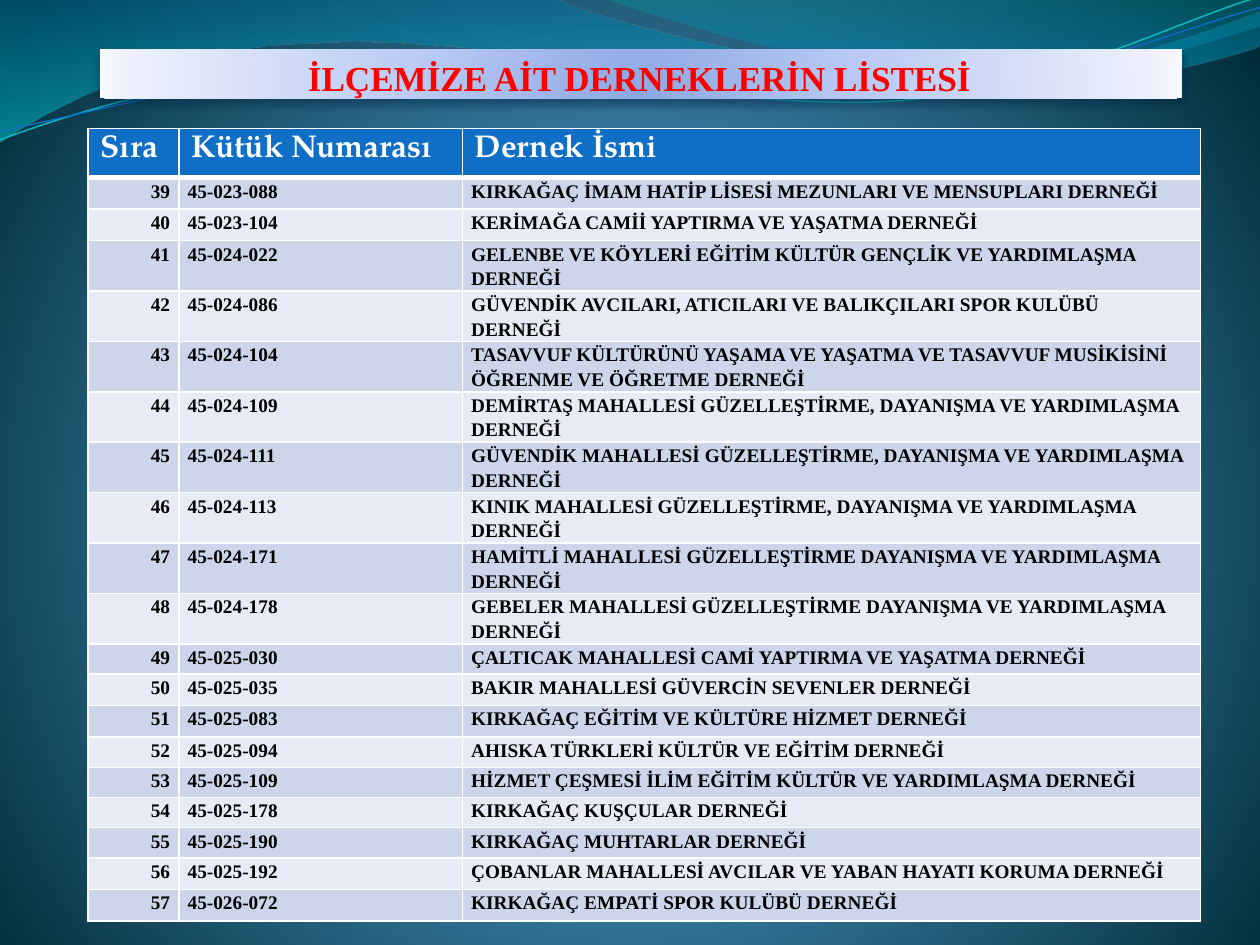
from lxml import etree
from pptx import Presentation
from pptx.dml.color import RGBColor
from pptx.enum.text import MSO_ANCHOR, MSO_AUTO_SIZE, PP_ALIGN
from pptx.oxml.ns import qn
from pptx.util import Inches, Pt

LEFT, CENTER, RIGHT = PP_ALIGN.LEFT, PP_ALIGN.CENTER, PP_ALIGN.RIGHT
BOTTOM, TOP = MSO_ANCHOR.BOTTOM, MSO_ANCHOR.TOP
NO_AUTOFIT = MSO_AUTO_SIZE.NONE
DRAWING = "http://schemas.openxmlformats.org/drawingml/2006/main"
COLORS = {
    "white": "FFFFFF", "black": "000000", "red": "FF0000", "header": "0F6FC6",
    "band_dark": "CCD5EA", "band_light": "E7EBF5", "shadow": "042747",
    "teal_line": "0AB8BF", "blue_line": "0F6FC6",
}


def set_gradient(properties, stops, direction):
    stop_xml = "".join(
        f'<a:gs pos="{place * 1000}"><a:srgbClr val="{color}">'
        f'<a:alpha val="{alpha * 1000}"/></a:srgbClr></a:gs>'
        for place, color, alpha in stops)
    gradient = etree.fromstring(
        f'<a:gradFill xmlns:a="{DRAWING}" rotWithShape="1">'
        f'<a:gsLst>{stop_xml}</a:gsLst>{direction}</a:gradFill>')
    properties.replace(properties.find(qn("a:noFill")), gradient)


def draw_curve(page, start, segments, closed):
    builder = page.shapes.build_freeform(Inches(start[0]), Inches(start[1]))
    builder.add_line_segments(
        [(Inches(segment[-1][0]), Inches(segment[-1][1])) for segment in segments],
        close=closed)
    shape = builder.convert_to_shape()
    lines = list(shape.element.iter(qn("a:lnTo")))
    for line, segment in zip(lines, segments):
        if len(segment) == 3:
            points = "".join(
                f'<a:pt x="{Inches(x) - shape.left}" y="{Inches(y) - shape.top}"/>'
                for x, y in segment)
            line.getparent().replace(line, etree.fromstring(
                f'<a:cubicBezTo xmlns:a="{DRAWING}">{points}</a:cubicBezTo>'))
    shape.shadow.inherit = False
    shape.fill.background()
    shape.line.fill.background()
    return shape


deck = Presentation()
deck.slide_width, deck.slide_height = Inches(10), Inches(7.5)
page = deck.slides.add_slide(deck.slide_layouts[5])

page.background.fill.background()
set_gradient(
    page.element.find(".//" + qn("p:bgPr")),
    [(0, "4AA0D6", 100), (25, "4C98C7", 100), (100, "002C38", 100)],
    '<a:path path="circle"><a:fillToRect l="10000" t="110000" r="10000" b="100000"/></a:path>')

waves = [
    ((0, 0), [
        [(4.4, -0.01)],
        [(4.76, 0.17), (6.64, 0.63), (7.58, 0.63)],
        [(8.53, 0.63), (9.58, 0.26), (10, 0.09)],
        [(10.01, 0.36)],
        [(9.83, 0.44), (8.7, 0.76), (7.46, 0.75)],
        [(6.22, 0.75), (3.82, 0.28), (2.57, 0.34)],
        [(1.29, 0.36), (0.46, 0.83), (-0.01, 1.13)],
        [(0, 0)],
    ], [(0, "0074A1", 45), (100, "00C6CF", 55)]),
    ((4.79, -0.01), [
        [(5.09, 0.11), (6.82, 0.62), (7.69, 0.65)],
        [(8.56, 0.69), (9.61, 0.32), (10, 0.21)],
        [(10, 0)],
        [(4.79, -0.01)],
    ], [(0, "00A1A9", 30), (80, "008BBF", 45)]),
]
for start, segments, stops in waves:
    wave = draw_curve(page, start, segments, True)
    set_gradient(wave.element.spPr, stops, '<a:lin ang="5400000" scaled="1"/>')

strands = [
    ((0, 1.11), [
        [(0.48, 0.93), (1.58, 0.57), (2.77, 0.52)],
        [(3.95, 0.47), (5.93, 0.89), (7.13, 0.8)],
        [(8.33, 0.71), (9.38, 0.15), (9.98, -0.02)],
    ], "teal_line", 0.85),
    ((0, 1.04), [
        [(0.47, 0.96), (1.64, 0.61), (2.83, 0.56)],
        [(4.03, 0.51), (5.97, 0.84), (7.17, 0.75)],
        [(8.36, 0.67), (9.41, 0.21), (10, 0.06)],
    ], "blue_line", 0.75),
]
for start, segments, color, width in strands:
    strand = draw_curve(page, start, segments, False)
    strand.line.color.rgb = RGBColor.from_string(COLORS[color])
    strand.line.width = Pt(width)

title = page.shapes.title
title.element.getparent().append(title.element)
title.left, title.top = Inches(0.79), Inches(0.39)
title.width, title.height = Inches(8.59), Inches(0.39)
title.fill.background()
set_gradient(
    title.element.spPr,
    [(0, "8DA8E3", 100), (43, "BBCBF3", 100), (93, "EAEFFB", 100), (100, "F7F9FF", 100)],
    '<a:path path="circle"><a:fillToRect l="50000" t="130000" r="50000" b="-30000"/></a:path>')
title.element.spPr.append(etree.fromstring(
    f'<a:effectLst xmlns:a="{DRAWING}"><a:outerShdw blurRad="{Pt(4.5)}" dist="{Pt(3)}" '
    f'dir="5400000" rotWithShape="0"><a:srgbClr val="{COLORS["shadow"]}">'
    '<a:alpha val="48000"/></a:srgbClr></a:outerShdw></a:effectLst>'))
frame = title.text_frame
frame.text = "İLÇEMİZE AİT DERNEKLERİN LİSTESİ"
frame_format = {
    "auto_size": NO_AUTOFIT, "word_wrap": True, "vertical_anchor": BOTTOM,
    "margin_left": 0, "margin_top": 0, "margin_right": Inches(0.02), "margin_bottom": 0,
}
for name, value in frame_format.items():
    setattr(frame, name, value)
para = frame.paragraphs[0]
para.alignment = CENTER
for name, value in {"size": Pt(20), "name": "Times New Roman", "bold": True}.items():
    setattr(para.runs[0].font, name, value)
para.runs[0].font.color.rgb = RGBColor.from_string(COLORS["red"])

headings = ("Sıra", "Kütük Numarası", "Dernek İsmi")
first_number = 39
associations = [
    ("45-023-088", "KIRKAĞAÇ İMAM HATİP LİSESİ MEZUNLARI VE MENSUPLARI DERNEĞİ"),
    ("45-023-104", "KERİMAĞA CAMİİ YAPTIRMA VE YAŞATMA DERNEĞİ"),
    ("45-024-022", "GELENBE VE KÖYLERİ EĞİTİM KÜLTÜR GENÇLİK VE YARDIMLAŞMA DERNEĞİ"),
    ("45-024-086", "GÜVENDİK AVCILARI, ATICILARI VE BALIKÇILARI SPOR KULÜBÜ DERNEĞİ"),
    ("45-024-104", "TASAVVUF KÜLTÜRÜNÜ YAŞAMA VE YAŞATMA VE TASAVVUF MUSİKİSİNİ "
                   "ÖĞRENME VE ÖĞRETME DERNEĞİ"),
    ("45-024-109", "DEMİRTAŞ MAHALLESİ GÜZELLEŞTİRME, DAYANIŞMA VE YARDIMLAŞMA DERNEĞİ"),
    ("45-024-111", "GÜVENDİK MAHALLESİ GÜZELLEŞTİRME, DAYANIŞMA VE YARDIMLAŞMA DERNEĞİ"),
    ("45-024-113", "KINIK MAHALLESİ GÜZELLEŞTİRME, DAYANIŞMA VE YARDIMLAŞMA DERNEĞİ"),
    ("45-024-171", "HAMİTLİ MAHALLESİ GÜZELLEŞTİRME DAYANIŞMA VE YARDIMLAŞMA DERNEĞİ"),
    ("45-024-178", "GEBELER MAHALLESİ GÜZELLEŞTİRME DAYANIŞMA VE YARDIMLAŞMA DERNEĞİ"),
    ("45-025-030", "ÇALTICAK MAHALLESİ CAMİ YAPTIRMA VE YAŞATMA DERNEĞİ"),
    ("45-025-035", "BAKIR MAHALLESİ GÜVERCİN SEVENLER DERNEĞİ"),
    ("45-025-083", "KIRKAĞAÇ EĞİTİM VE KÜLTÜRE HİZMET DERNEĞİ"),
    ("45-025-094", "AHISKA TÜRKLERİ KÜLTÜR VE EĞİTİM DERNEĞİ"),
    ("45-025-109", "HİZMET ÇEŞMESİ İLİM EĞİTİM KÜLTÜR VE YARDIMLAŞMA DERNEĞİ"),
    ("45-025-178", "KIRKAĞAÇ KUŞÇULAR DERNEĞİ"),
    ("45-025-190", "KIRKAĞAÇ MUHTARLAR DERNEĞİ"),
    ("45-025-192", "ÇOBANLAR MAHALLESİ AVCILAR VE YABAN HAYATI KORUMA DERNEĞİ"),
    ("45-026-072", "KIRKAĞAÇ EMPATİ SPOR KULÜBÜ DERNEĞİ"),
]
rows = [headings] + [
    (str(number), *entry) for number, entry in enumerate(associations, first_number)]
low_rows = {"49", "52", "53", "54", "55"}
heights = [0.39] + [
    0.4 if len(name) > 60 else 0.24 if number in low_rows else 0.25
    for number, code, name in rows[1:]]
table = page.shapes.add_table(
    len(rows), len(headings), Inches(0.7), Inches(1.02), Inches(8.83), Inches(6.48)).table
for column, width in zip(table.columns, (0.72, 2.25, 5.86)):
    column.width = Inches(width)

header_font = {"size": Pt(18), "name": "TeX Gyre Pagella", "bold": True}
body_font = {"size": Pt(11), "name": "Times New Roman", "bold": True}
body_margins = {"margin_left": Inches(0.07), "margin_right": Inches(0.07),
                "margin_top": 0, "margin_bottom": 0}
for row, texts in enumerate(rows):
    table.rows[row].height = Inches(heights[row])
    is_header = row == 0
    fill_name = "header" if is_header else "band_dark" if row % 2 else "band_light"
    for column, text in enumerate(texts):
        cell = table.cell(row, column)
        cell.text = text
        cell.vertical_anchor = TOP
        cell.fill.solid()
        cell.fill.fore_color.rgb = RGBColor.from_string(COLORS[fill_name])
        para = cell.text_frame.paragraphs[0]
        para.alignment = LEFT if is_header or column else RIGHT
        if not is_header:
            para.line_spacing = 1.15
            for name, value in body_margins.items():
                setattr(cell, name, value)
        font = para.runs[0].font
        for name, value in (header_font if is_header else body_font).items():
            setattr(font, name, value)
        font.color.rgb = RGBColor.from_string(COLORS["white" if is_header else "black"])
        for index, side in enumerate("LRTB"):
            thick = (row, side) in ((0, "B"), (1, "T"))
            cell._tc.tcPr.insert(index, etree.fromstring(
                f'<a:ln{side} xmlns:a="{DRAWING}" w="{Pt(3 if thick else 1)}"><a:solidFill>'
                f'<a:srgbClr val="{COLORS["white"]}"/></a:solidFill></a:ln{side}>'))

deck.save("out.pptx")
